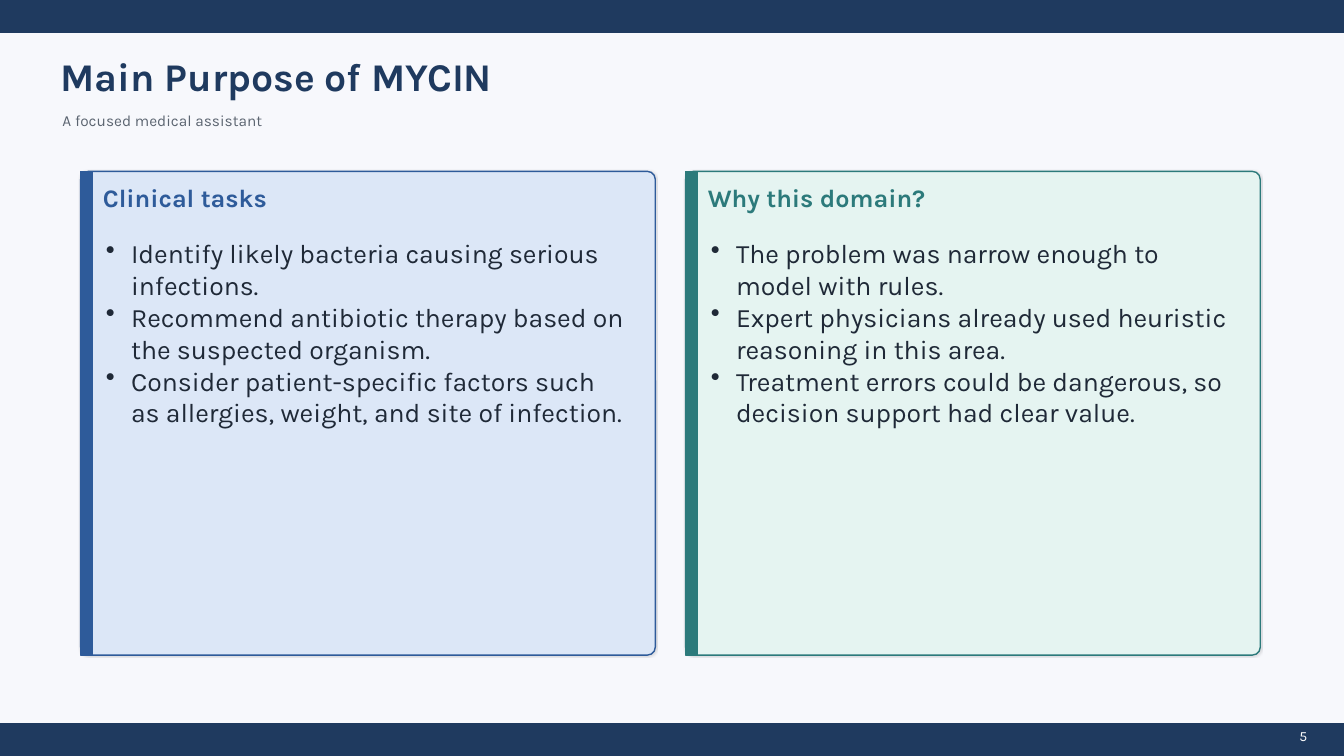
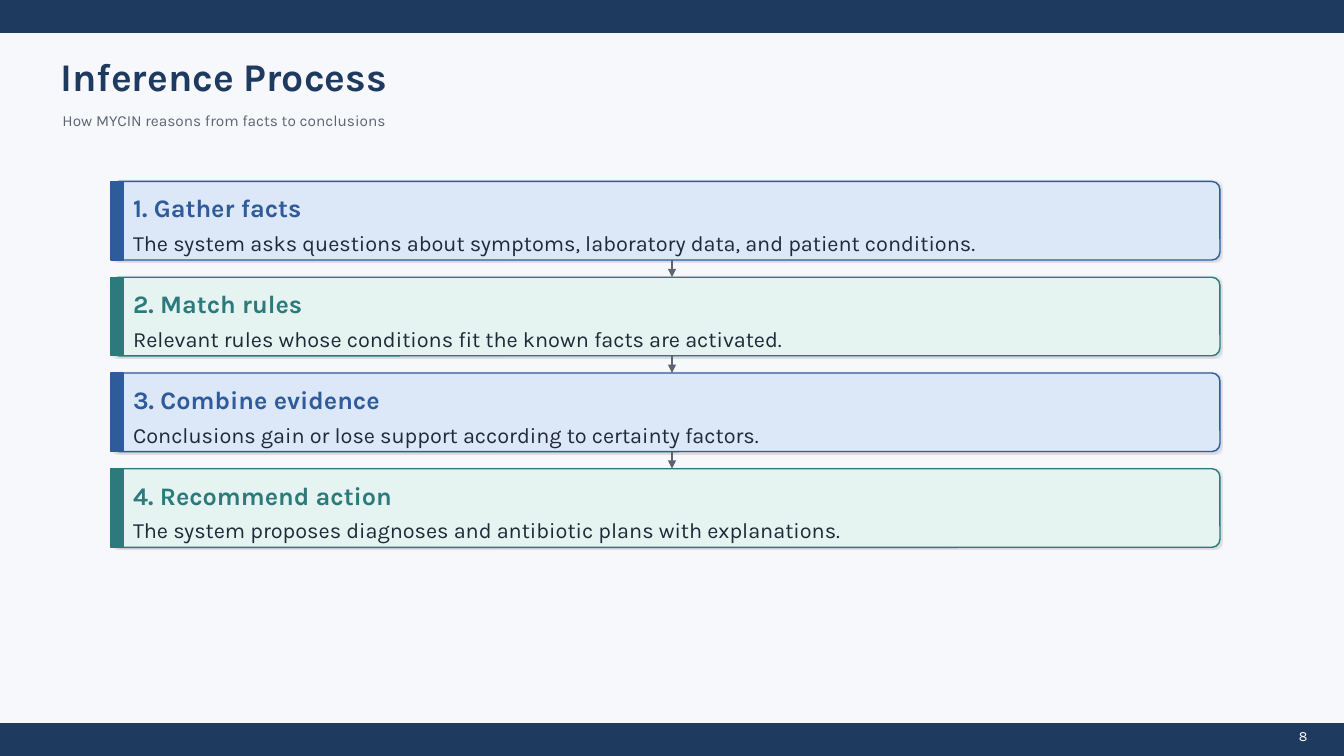
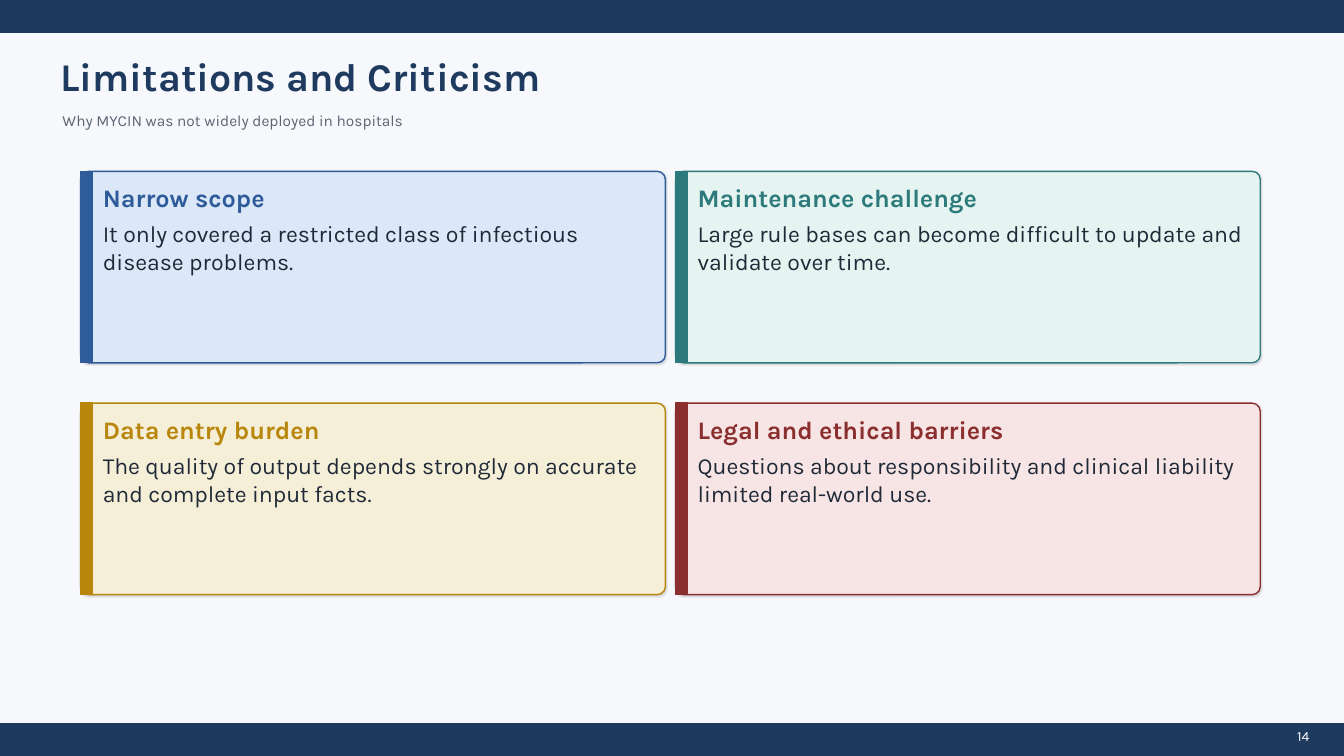
import collections
import lxml.etree
import pptx
import pptx.dml.color
import pptx.enum.shapes
import pptx.enum.text
import pptx.oxml.ns
import pptx.util

COLUMNS, ROWS = 133.3, 75
CELL = pptx.util.Inches(0.1)
FONT = "Karla"
COLORS = {
    "background": "F7F8FC", "navy": "1F3A5F", "ink": "1F2937", "gray": "5B6470", "white": "FFFFFF",
    "blue": "2E5B9A", "pale blue": "DCE7F7", "teal": "2C7A7B", "pale teal": "E5F4F1",
    "gold": "B8860B", "pale gold": "F6EFD8", "red": "8B2E2E", "pale red": "F7E4E4",
}
SHAPES = pptx.enum.shapes.MSO_SHAPE
ANCHORS = pptx.enum.text.MSO_ANCHOR
Box = collections.namedtuple("Box", "left top width height")


def cells(count):
    return round(count * CELL)


def color(name):
    return pptx.dml.color.RGBColor.from_string(COLORS[name])


def add_xml(parent, tag, **attributes):
    return lxml.etree.SubElement(parent, pptx.oxml.ns.qn(tag), attributes)


def add_panel(slide, kind, box, fill, line):
    shape = slide.shapes.add_shape(kind, *map(cells, box))
    shape.shadow.inherit = False
    shape.fill.solid()
    shape.fill.fore_color.rgb = color(fill)
    shape.line.color.rgb = color(line)
    shape.line.width = pptx.util.Pt(1)
    return shape


def add_shadow(shape):
    effects = shape.element.spPr.find(pptx.oxml.ns.qn("a:effectLst"))
    shadow = add_xml(effects, "a:outerShdw", blurRad="12700", dist="6350", dir="2700000",
                     algn="bl", rotWithShape="0")
    black = add_xml(shadow, "a:srgbClr", val="000000")
    add_xml(black, "a:alpha", val="12000")


def add_text(slide, box, lines, size, ink, bold=False, anchor=ANCHORS.MIDDLE, bullets=False):
    frame = slide.shapes.add_textbox(*map(cells, box)).text_frame
    frame.word_wrap = True
    frame.vertical_anchor = anchor
    frame.margin_left = frame.margin_top = frame.margin_right = frame.margin_bottom = 0
    frame.text = "\n".join(lines)
    for paragraph in frame.paragraphs:
        if bullets:
            properties = paragraph._p.get_or_add_pPr()
            properties.set("marL", str(cells(2.5)))
            properties.set("indent", str(cells(-2.5)))
            add_xml(properties, "a:buChar", char="•")
        for run in paragraph.runs:
            run.font.name = FONT
            run.font.size = pptx.util.Pt(size)
            run.font.bold = bold
            run.font.color.rgb = color(ink)
    return frame


def add_card(slide, box, accent, heading, lines, size, bullets=False):
    card = add_panel(slide, SHAPES.ROUNDED_RECTANGLE, box, "pale " + accent, accent)
    card.adjustments[0] = 0.8 / min(box.width, box.height)
    add_shadow(card)
    add_panel(slide, SHAPES.RECTANGLE, box._replace(width=1.2), accent, accent)
    add_text(slide, Box(box.left + 2.2, box.top + 1.2, box.width - 3, 2.8),
             [heading], 18, accent, bold=True)
    if bullets:
        body = Box(box.left + 2.5, box.top + 6.5, box.width - 5.5, box.height - 10)
    else:
        body = Box(box.left + 2.2, box.top + 4.8, box.width - 3, box.height - 5.8)
    add_text(slide, body, lines, size, "ink", anchor=ANCHORS.TOP, bullets=bullets)


def add_down_arrow(slide, column, top, bottom):
    arrow = slide.shapes.add_connector(pptx.enum.shapes.MSO_CONNECTOR.STRAIGHT,
                                       cells(column), cells(top), cells(column), cells(bottom))
    arrow.line.color.rgb = color("gray")
    arrow.line.width = pptx.util.Pt(1)
    properties = arrow.element.spPr
    add_xml(properties.find(pptx.oxml.ns.qn("a:ln")), "a:tailEnd", type="triangle")
    add_xml(properties, "a:effectLst")


def dress_layout(layout, slide):
    for placeholder in list(layout.placeholders):
        layout.shapes.element.remove(placeholder.element)
    layout.background.fill.solid()
    layout.background.fill.fore_color.rgb = color("background")
    for top in (0, ROWS - 3.2):
        band = add_panel(slide, SHAPES.RECTANGLE, Box(0, top, COLUMNS, 3.2), "navy", "navy")
        layout.shapes.element.append(band.element)


def add_header(slide, title, subtitle):
    add_text(slide, Box(6, 5, 88, 5), [title], 28, "navy", bold=True)
    add_text(slide, Box(6.2, 10.8, 88, 2.2), [subtitle], 11, "gray")


def add_page_number(slide, number):
    frame = add_text(slide, Box(127.5, 72.2, 3.5, 1.8), [str(number)], 10, "white",
                     anchor=ANCHORS.TOP)
    frame.paragraphs[0].alignment = pptx.enum.text.PP_ALIGN.CENTER


def add_card_grid(slide, area, columns, gaps, cards, size, bullets=False):
    rows = len(cards) // columns
    width = (area.width - gaps[0] * (columns - 1)) / columns
    height = (area.height - gaps[1] * (rows - 1)) / rows
    for index, (accent, heading, lines) in enumerate(cards):
        row, column = divmod(index, columns)
        box = Box(area.left + column * (width + gaps[0]), area.top + row * (height + gaps[1]),
                  width, height)
        add_card(slide, box, accent, heading, lines, size, bullets)


def add_steps(slide, area, gap, steps):
    height = (area.height - gap * (len(steps) - 1)) / len(steps)
    for index, (heading, line) in enumerate(steps):
        top = area.top + index * (height + gap)
        if index:
            add_down_arrow(slide, COLUMNS / 2, top - gap, top)
        add_card(slide, Box(area.left, top, area.width, height), ("blue", "teal")[index % 2],
                 f"{index + 1}. {heading}", [line], 15.5)


def build_purpose(slide):
    add_header(slide, "Main Purpose of MYCIN", "A focused medical assistant")
    add_card_grid(slide, Box(8, 17, 117, 48), 2, (3, 0), [
        ("blue", "Clinical tasks", [
            "Identify likely bacteria causing serious infections.",
            "Recommend antibiotic therapy based on the suspected organism.",
            "Consider patient-specific factors such as allergies, weight, and site of infection."]),
        ("teal", "Why this domain?", [
            "The problem was narrow enough to model with rules.",
            "Expert physicians already used heuristic reasoning in this area.",
            "Treatment errors could be dangerous, so decision support had clear value."]),
    ], 19, bullets=True)
    add_page_number(slide, 5)


def build_inference(slide):
    add_header(slide, "Inference Process", "How MYCIN reasons from facts to conclusions")
    add_steps(slide, Box(11, 18, 110, 36.3), 1.7, [
        ("Gather facts",
         "The system asks questions about symptoms, laboratory data, and patient conditions."),
        ("Match rules", "Relevant rules whose conditions fit the known facts are activated."),
        ("Combine evidence", "Conclusions gain or lose support according to certainty factors."),
        ("Recommend action",
         "The system proposes diagnoses and antibiotic plans with explanations."),
    ])
    add_page_number(slide, 8)


def build_limitations(slide):
    add_header(slide, "Limitations and Criticism", "Why MYCIN was not widely deployed in hospitals")
    add_card_grid(slide, Box(8, 17, 117, 42), 2, (1, 4), [
        ("blue", "Narrow scope",
         ["It only covered a restricted class of infectious disease problems."]),
        ("teal", "Maintenance challenge",
         ["Large rule bases can become difficult to update and validate over time."]),
        ("gold", "Data entry burden",
         ["The quality of output depends strongly on accurate and complete input facts."]),
        ("red", "Legal and ethical barriers",
         ["Questions about responsibility and clinical liability limited real-world use."]),
    ], 16.5)
    add_page_number(slide, 14)


def main():
    presentation = pptx.Presentation()
    presentation.slide_width, presentation.slide_height = cells(COLUMNS), cells(ROWS)
    layout = presentation.slide_layouts[6]
    builders = (build_purpose, build_inference, build_limitations)
    slides = [presentation.slides.add_slide(layout) for _ in builders]
    dress_layout(layout, slides[0])
    for build, slide in zip(builders, slides):
        build(slide)
    presentation.save("out.pptx")


if __name__ == "__main__":
    main()
